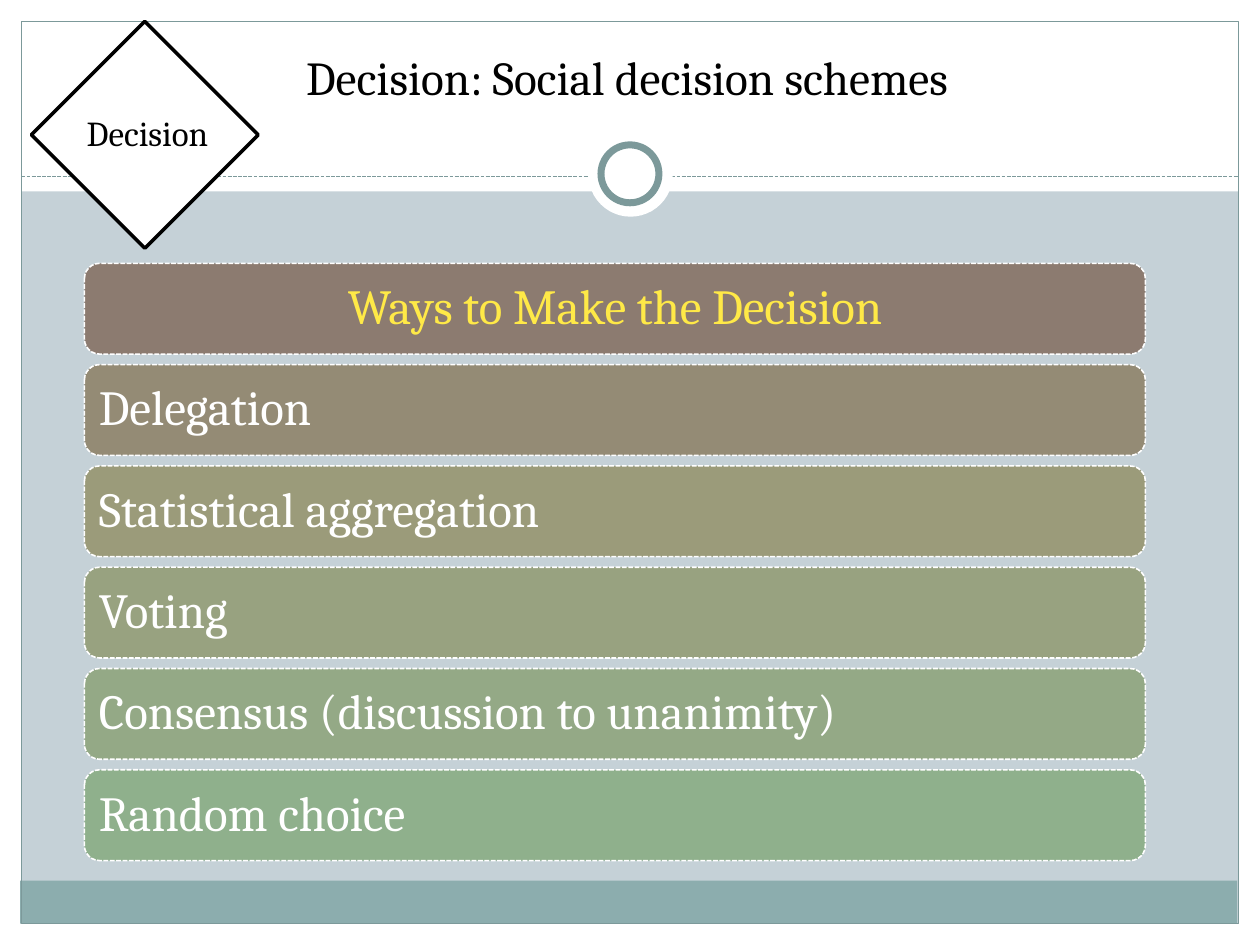
from dataclasses import dataclass
from typing import Optional

from lxml import etree
from pptx import Presentation
from pptx.dml.color import RGBColor
from pptx.enum.dml import MSO_LINE
from pptx.enum.shapes import MSO_CONNECTOR, MSO_SHAPE
from pptx.enum.text import MSO_ANCHOR, MSO_AUTO_SIZE, PP_ALIGN
from pptx.oxml.ns import qn
from pptx.util import Inches, Pt

RECT, OVAL = MSO_SHAPE.RECTANGLE, MSO_SHAPE.OVAL
ROUNDED, DIAMOND = MSO_SHAPE.ROUNDED_RECTANGLE, MSO_SHAPE.FLOWCHART_DECISION
STRAIGHT = MSO_CONNECTOR.STRAIGHT
DASH = MSO_LINE.SQUARE_DOT  # written as sysDash
LEFT, CENTER = PP_ALIGN.LEFT, PP_ALIGN.CENTER
TOP, MIDDLE = MSO_ANCHOR.TOP, MSO_ANCHOR.MIDDLE
NO_AUTOFIT = MSO_AUTO_SIZE.NONE

FONT = "Cambria"
COLORS = {
    "background": "C5D1D7",
    "white": "FFFFFF",
    "black": "000000",
    "footer": "8CADAE",
    "frame": "7C999A",
    "heading": "FFE947",
}
TITLE_ONLY = 5
BAR_LEFT, BAR_TOP, BAR_WIDTH, BAR_HEIGHT, BAR_PITCH = 0.67, 2.09, 8.42, 0.72, 0.804


@dataclass
class Box:
    kind: int
    left: float
    top: float
    width: float
    height: float
    fill: Optional[str] = None
    line: Optional[str] = None
    weight: float = 0.75


@dataclass
class Bar:
    text: str
    fill: str
    color: str = COLORS["white"]
    align: int = LEFT


BACKDROP = [
    Box(RECT, 0, 7.33, 10, 0.17, COLORS["white"]),
    Box(RECT, 0, 0, 10, 1.52, COLORS["white"]),
    Box(RECT, 0, 0, 0.17, 7.5, COLORS["white"]),
    Box(RECT, 9.83, 0, 0.17, 7.5, COLORS["white"]),
    Box(RECT, 0.16, 6.99, 9.66, 0.34, COLORS["footer"]),
    Box(RECT, 0.17, 0.17, 9.66, 7.16, None, COLORS["frame"]),
]
ORNAMENTS = [
    Box(OVAL, 4.67, 1.05, 0.67, 0.67, COLORS["white"]),
    Box(OVAL, 4.77, 1.15, 0.46, 0.46, COLORS["white"], COLORS["frame"], 4),
    Box(DIAMOND, 0.25, 0.17, 1.8, 1.8, COLORS["white"], COLORS["black"], 2),
]
BARS = [
    Bar("Ways to Make the Decision", "8C7B70", COLORS["heading"], CENTER),
    Bar("Delegation", "948B75"),
    Bar("Statistical aggregation", "9B9B7A"),
    Bar("Voting", "98A280"),
    Bar("Consensus (discussion to unanimity)", "94A986"),
    Bar("Random choice", "8FB08C"),
]


def rgb(color: str) -> RGBColor:
    return RGBColor.from_string(color)


def draw_box(s, box: Box):
    sp = s.shapes.add_shape(box.kind, Inches(box.left), Inches(box.top),
                            Inches(box.width), Inches(box.height))
    sp.shadow.inherit = False
    if box.fill:
        sp.fill.solid()
        sp.fill.fore_color.rgb = rgb(box.fill)
    else:
        sp.fill.background()
    if box.line:
        sp.line.color.rgb = rgb(box.line)
        sp.line.width = Pt(box.weight)
    else:
        sp.line.fill.background()
    return sp


def write_text(sp, text: str, size: float, color: str, align: int = LEFT, anchor: int = MIDDLE):
    tf = sp.text_frame
    tf.word_wrap = True
    tf.auto_size = NO_AUTOFIT
    tf.vertical_anchor = anchor
    p = tf.paragraphs[0]
    p.alignment = align
    r = p.add_run()
    r.text = text
    r.font.name = FONT
    r.font.size = Pt(size)
    r.font.color.rgb = rgb(color)
    return p


def draw_divider(s) -> None:
    line = s.shapes.add_connector(STRAIGHT, Inches(0.17), Inches(1.4), Inches(9.83), Inches(1.4))
    line.line.color.rgb = rgb(COLORS["frame"])
    line.line.width = Pt(0.75)
    line.line.dash_style = DASH
    etree.SubElement(line.element.spPr, qn("a:effectLst"))


def draw_bar(s, bar: Bar, row: int) -> None:
    sp = draw_box(s, Box(ROUNDED, BAR_LEFT, BAR_TOP + row * BAR_PITCH, BAR_WIDTH, BAR_HEIGHT,
                         bar.fill, COLORS["white"], 0.9))
    sp.line.dash_style = DASH
    tf = sp.text_frame
    tf.margin_left = tf.margin_right = Inches(0.08)
    tf.margin_top = tf.margin_bottom = Inches(0.08)
    p = write_text(sp, bar.text, 28, bar.color, bar.align)
    p.line_spacing = 0.9


def place_title(s) -> None:
    """Fill the title and bring it in front of the white header band."""
    title = s.shapes.title
    title.left, title.top = Inches(2.33), Inches(0.33)
    title.width, title.height = Inches(7), Inches(0.67)
    write_text(title, "Decision: Social decision schemes", 27, COLORS["black"], anchor=TOP)
    title.element.getparent().append(title.element)


def main() -> None:
    prs = Presentation()
    prs.slide_width, prs.slide_height = Inches(10), Inches(7.5)
    s = prs.slides.add_slide(prs.slide_layouts[TITLE_ONLY])
    s.background.fill.solid()
    s.background.fill.fore_color.rgb = rgb(COLORS["background"])

    for box in BACKDROP:
        draw_box(s, box)
    draw_divider(s)
    for box in ORNAMENTS:
        draw_box(s, box)
    label = s.shapes.add_textbox(Inches(0.59), Inches(0.8), Inches(1.6), Inches(0.5))
    write_text(label, "Decision", 20, COLORS["black"])
    for row, bar in enumerate(BARS):
        draw_bar(s, bar, row)
    place_title(s)
    prs.save("out.pptx")


if __name__ == "__main__":
    main()
